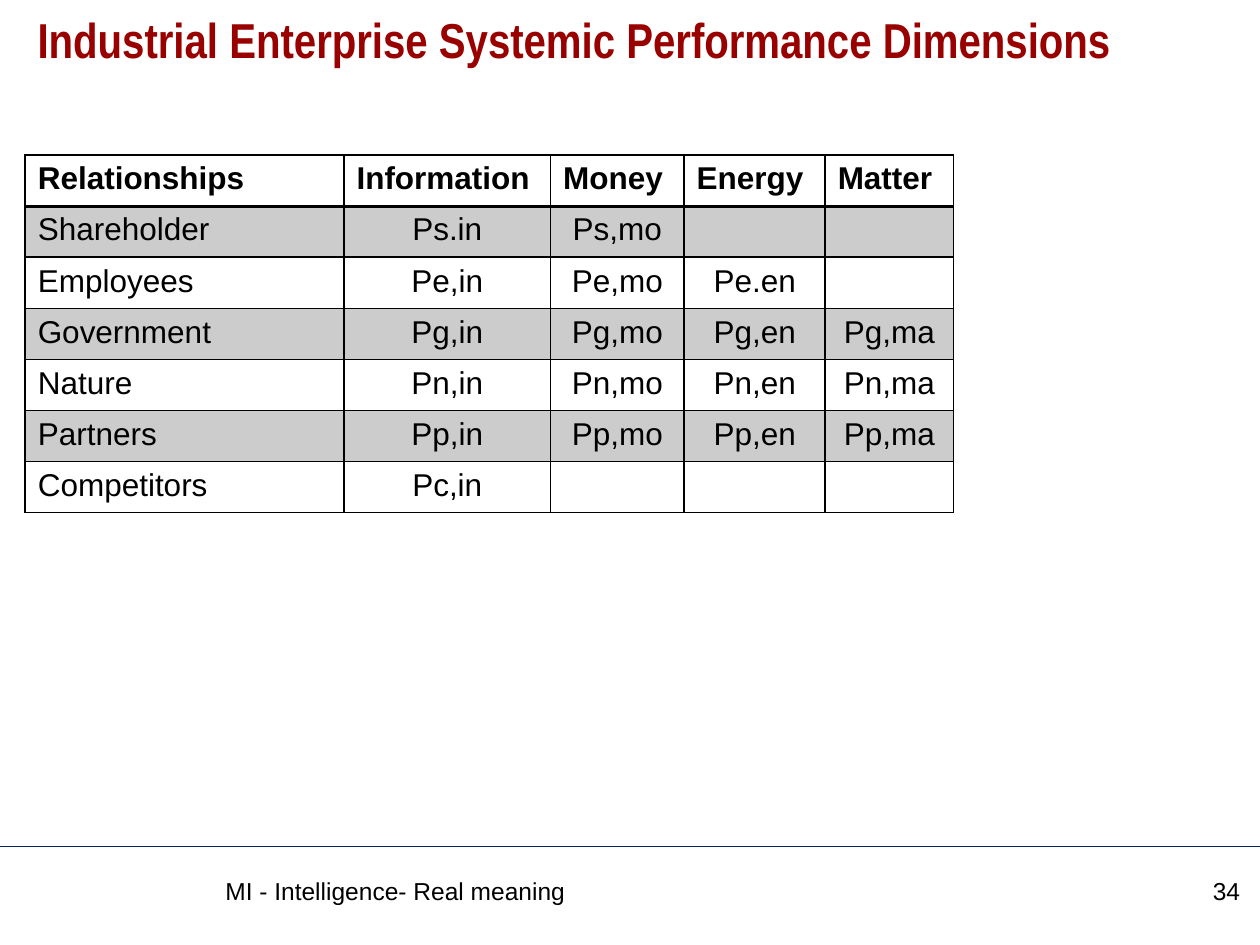
from lxml.etree import SubElement
from pptx import Presentation
from pptx.dml.color import RGBColor
from pptx.enum.text import PP_ALIGN
from pptx.oxml.ns import qn
from pptx.util import Inches, Pt

WIDE, HIGH = 10, 7.5
HUES = {"title": "990000", "ink": "000000", "rule": "002060"}
COLS = [2.53, 1.64, 1.06, 1.12, 1.02]
ROWS = [
    ["Relationships", "Information", "Money", "Energy", "Matter"],
    ["Shareholder", "Ps.in", "Ps,mo", "", ""],
    ["Employees", "Pe,in", "Pe,mo", "Pe.en", ""],
    ["Government", "Pg,in", "Pg,mo", "Pg,en", "Pg,ma"],
    ["Nature", "Pn,in", "Pn,mo", "Pn,en", "Pn,ma"],
    ["Partners", "Pp,in", "Pp,mo", "Pp,en", "Pp,ma"],
    ["Competitors", "Pc,in", "", "", ""],
]


def style(para, size, hue="ink", face="Arial", bold=False, align=PP_ALIGN.LEFT):
    para.alignment = align
    font = para.font
    for run in para.runs:
        font = run.font
    font.size, font.name, font.bold = Pt(size), face, bold
    font.color.rgb = RGBColor.from_string(HUES[hue])


def label(slide, box, text, size, **look):
    frame = slide.shapes.add_textbox(*map(Inches, box)).text_frame
    frame.word_wrap = True
    frame.text = text
    style(frame.paragraphs[0], size, **look)
    return frame.paragraphs[0]


def heading(slide, box):
    para = label(slide, box, "Industrial Enterprise Systemic Performance Dimensions",
                 28, hue="title", face="Arial Narrow", bold=True)
    para.line_spacing = 0.9


def border(cell, sides):
    props = cell._tc.get_or_add_tcPr()
    for side, width in sides.items():
        line = SubElement(props, qn(f"a:ln{side}"), w=str(Pt(width)))
        fill = SubElement(line, qn("a:solidFill"))
        SubElement(fill, qn("a:srgbClr"), val=HUES["ink"])


def shade(cell, banded):
    if not banded:
        cell.fill.background()
        return
    cell.fill.solid()
    cell.fill.fore_color.rgb = RGBColor.from_string(HUES["ink"])
    tint = cell._tc.tcPr.find(".//" + qn("a:solidFill") + "[last()]/" + qn("a:srgbClr"))
    tint = cell._tc.tcPr.find(qn("a:solidFill")).find(qn("a:srgbClr"))
    SubElement(tint, qn("a:alpha"), val="20000")


def matrix(slide, box):
    grid = slide.shapes.add_table(len(ROWS), len(COLS), *map(Inches, box)).table
    grid.first_row = grid.horz_banding = False
    for col, share in zip(grid.columns, COLS):
        col.width = Inches(box[2] * share / sum(COLS))
    for r, row in enumerate(ROWS):
        for c, text in enumerate(row):
            cell = grid.cell(r, c)
            cell.text = text
            align = PP_ALIGN.CENTER if r and c else PP_ALIGN.LEFT
            style(cell.text_frame.paragraphs[0], 18, bold=r == 0, align=align)
            border(cell, {"L": 1, "R": 1, "T": 2 if r == 1 else 1, "B": 1 if r else 2})
            shade(cell, r % 2 == 1)


def footer(slide, box):
    left, top, width, height = box
    rule = slide.shapes.add_connector(1, *map(Inches, (left, top, left + width, top)))
    rule.line.color.rgb = RGBColor.from_string(HUES["rule"])
    rule.line.width = Pt(0.75)
    SubElement(rule._element.spPr, qn("a:effectLst"))
    base, tall = top + 0.23 * height, 0.58 * height
    label(slide, (left + 0.169 * width, base, 0.721 * width, tall),
          "MI - Intelligence- Real meaning", 14)
    label(slide, (left + 0.902 * width, base, 0.092 * width, tall),
          "34", 14, align=PP_ALIGN.RIGHT)


def main():
    deck = Presentation()
    deck.slide_width, deck.slide_height = Inches(WIDE), Inches(HIGH)
    slide = deck.slides.add_slide(deck.slide_layouts[6])
    edge = 0.02 * WIDE
    heading(slide, (edge, 0.08, WIDE - 2 * edge, 0.11 * HIGH))
    matrix(slide, (edge, 1.23, sum(COLS), 2.84))
    footer(slide, (0, 6.72, WIDE, HIGH - 6.72))
    deck.save("out.pptx")


if __name__ == "__main__":
    main()
